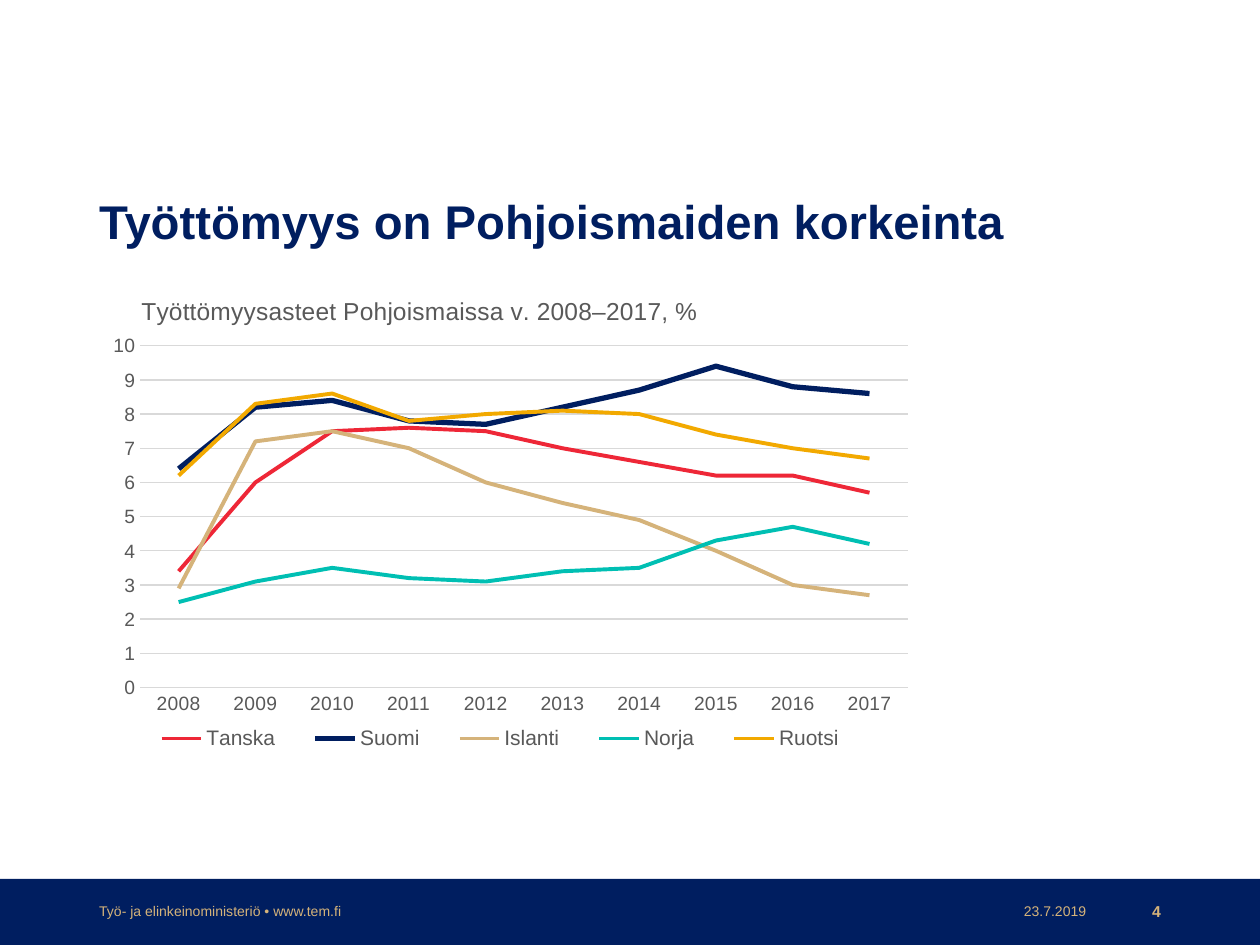
import pptx
import pptx.chart.data
import pptx.dml.color
import pptx.enum.chart
import pptx.enum.shapes
import pptx.enum.text
import pptx.oxml
import pptx.oxml.ns
import pptx.util
from pptx.util import Cm, Pt

FONT = "Arial"
NAVY, SAND, GREY, GRID = "001E60", "D5B37A", "595959", "D9D9D9"

TITLE = "Työttömyys on Pohjoismaiden korkeinta"
CHART_TITLE = "Työttömyysasteet Pohjoismaissa v. 2008–2017, %"
YEARS = [str(year) for year in range(2008, 2018)]
# name, colour, line width in points, unemployment rates
COUNTRIES = [
    ("Tanska", "EE2737", 2.25, (3.4, 6, 7.5, 7.6, 7.5, 7, 6.6, 6.2, 6.2, 5.7)),
    ("Suomi", NAVY, 3, (6.4, 8.2, 8.4, 7.8, 7.7, 8.2, 8.7, 9.4, 8.8, 8.6)),
    ("Islanti", SAND, 2.25, (2.9, 7.2, 7.5, 7, 6, 5.4, 4.9, 4, 3, 2.7)),
    ("Norja", "00BFB3", 2.25, (2.5, 3.1, 3.5, 3.2, 3.1, 3.4, 3.5, 4.3, 4.7, 4.2)),
    ("Ruotsi", "F2A900", 2.25, (6.2, 8.3, 8.6, 7.8, 8, 8.1, 8, 7.4, 7, 6.7)),
]
LEFT, ALIGN = 1.75, pptx.enum.text.PP_ALIGN
# text, left and width in cm, size, bold, alignment
FOOTER = [
    ("Työ- ja elinkeinoministeriö •\u00a0www.tem.fi", LEFT, 8.56, 8, False, ALIGN.LEFT),
    ("23.7.2019", 20.19, 1.96, 8, False, ALIGN.RIGHT),
    ("4", 22.15, 1.5, 9, True, ALIGN.RIGHT),
]


def rgb(colour):
    return pptx.dml.color.RGBColor.from_string(colour)


def style_font(font, size, colour, bold=False):
    font.name, font.size, font.bold = FONT, Pt(size), bold
    font.color.rgb = rgb(colour)


def style_line(line, colour, width):
    line.color.rgb = rgb(colour)
    line.width = Pt(width)


def add_text(slide, text, box, size, colour, bold=False, align=ALIGN.LEFT):
    frame = slide.shapes.add_textbox(*map(Cm, box)).text_frame
    frame.word_wrap = True
    frame.vertical_anchor = pptx.enum.text.MSO_ANCHOR.MIDDLE
    frame.text = text
    paragraph = frame.paragraphs[0]
    paragraph.alignment = align
    style_font(paragraph.runs[0].font, size, colour, bold)
    return paragraph


def place(element, after=None, inner=False, **fractions):
    """Give a chart part a manual layout in fractions of the chart."""
    qn = pptx.oxml.ns.qn
    for old in element.findall(qn("c:layout")):
        element.remove(old)
    settings = {"layoutTarget": "inner"} if inner else {}
    settings |= {"xMode": "edge", "yMode": "edge"} | fractions
    parts = "".join(f'<c:{name} val="{value}"/>' for name, value in settings.items())
    layout = pptx.oxml.parse_xml(
        f'<c:layout {pptx.oxml.ns.nsdecls("c")}><c:manualLayout>{parts}'
        "</c:manualLayout></c:layout>")
    before = element.find(qn(after)) if after else None
    element.insert(0 if before is None else element.index(before) + 1, layout)


def add_unemployment_chart(slide):
    enums = pptx.enum.chart
    data = pptx.chart.data.CategoryChartData()
    data.categories = YEARS
    for name, _, _, rates in COUNTRIES:
        data.add_series(name, rates)
    chart = slide.shapes.add_chart(
        enums.XL_CHART_TYPE.LINE, Cm(LEFT), Cm(5.77), Cm(16.84), Cm(9.6), data).chart
    style_font(chart.font, 10, "000000")

    chart.has_title = True
    title = chart.chart_title
    title.text_frame.text = CHART_TITLE
    style_font(title.text_frame.paragraphs[0].runs[0].font, 14, GREY)
    title.include_in_layout = False

    chart.has_legend = True
    legend = chart.legend
    legend.position = enums.XL_LEGEND_POSITION.BOTTOM
    legend.include_in_layout = False
    style_font(legend.font, 12, GREY)

    for axis in (chart.category_axis, chart.value_axis):
        axis.major_tick_mark = axis.minor_tick_mark = enums.XL_TICK_MARK.NONE
        style_font(axis.tick_labels.font, 11, GREY)
    style_line(chart.category_axis.format.line, GRID, 0.75)
    values = chart.value_axis
    values.minimum_scale, values.maximum_scale, values.major_unit = 0, 10, 1
    values.format.line.fill.background()
    style_line(values.major_gridlines.format.line, GRID, 0.75)

    for series, (_, colour, width, _) in zip(chart.plots[0].series, COUNTRIES):
        series.smooth = False
        series.marker.style = enums.XL_MARKER_STYLE.NONE
        style_line(series.format.line, colour, width)

    plot_area = chart._chartSpace.xpath("c:chart/c:plotArea")[0]
    place(plot_area, inner=True, x=0.064, y=0.125, w=0.919, h=0.718)
    place(title._element, after="c:tx", x=0.06, y=0.01)
    place(legend._element, after="c:legendPos", x=0.05, y=0.91, w=0.89, h=0.08)


def main():
    presentation = pptx.Presentation()
    presentation.slide_width, presentation.slide_height = Cm(25.4), Cm(19.05)
    slide = presentation.slides.add_slide(presentation.slide_layouts[6])

    band = slide.shapes.add_shape(
        pptx.enum.shapes.MSO_SHAPE.RECTANGLE, 0, Cm(17.72), Cm(25.4), Cm(1.33))
    band.shadow.inherit = False
    band.fill.solid()
    band.fill.fore_color.rgb = rgb(NAVY)
    band.line.fill.background()

    add_text(slide, TITLE, (LEFT, 3.48, 19.89, 2.08), 27, NAVY, True).line_spacing = 0.9
    for text, left, width, size, bold, align in FOOTER:
        add_text(slide, text, (left, 18.08, width, 0.58), size, SAND, bold, align)
    add_unemployment_chart(slide)
    presentation.save("out.pptx")


if __name__ == "__main__":
    main()
